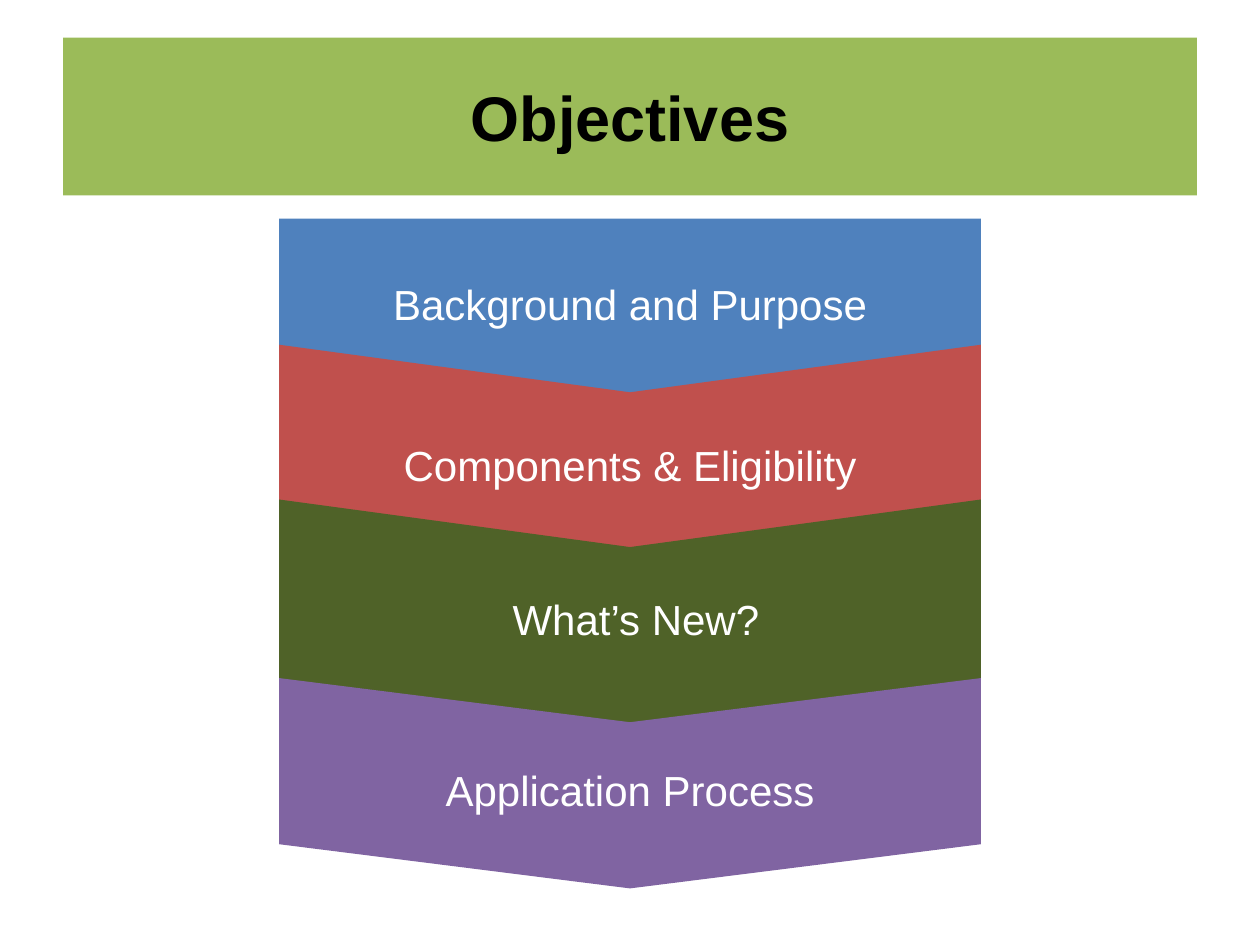
from pptx import Presentation
from pptx.dml.color import RGBColor
from pptx.enum import shapes, text
from pptx.util import Cm, Pt

BLACK = RGBColor(0x00, 0x00, 0x00)
WHITE = RGBColor(0xFF, 0xFF, 0xFF)
LIME = RGBColor(0x9B, 0xBB, 0x59)
BLUE = RGBColor(0x4F, 0x81, 0xBD)
RED = RGBColor(0xC0, 0x50, 0x4D)
GREEN = RGBColor(0x4F, 0x62, 0x28)
PURPLE = RGBColor(0x80, 0x64, 0xA2)

PENTAGON = shapes.MSO_SHAPE.PENTAGON
CHEVRON = shapes.MSO_SHAPE.CHEVRON

TITLE = "Objectives"
OBJECTIVES = [
    ("Background and Purpose", PENTAGON, BLUE, 4.41, 3.61, 0.22, 0.38),
    ("Components & Eligibility", CHEVRON, RED, 6.95, 4.57, 0.21, 0.43),
    (" What’s New?", CHEVRON, GREEN, 10.07, 4.57, 0.21, 0.43),
    ("Application Process", CHEVRON, PURPLE, 13.67, 4.24, 0.21, 0.43),
]
SLIDE_W, SLIDE_H = 25.4, 19.05
BAND_W = 14.15

TITLE_FONT = {"name": "Arial", "size": Pt(36), "bold": True}
BAND_FONT = {"name": "Arial", "size": Pt(24), "bold": False}


def set_all(obj, values):
    for name, value in values.items():
        setattr(obj, name, value)


def write(sp, words, font, color):
    tf = sp.text_frame
    set_all(tf, {"word_wrap": True, "vertical_anchor": text.MSO_ANCHOR.MIDDLE})
    p = tf.paragraphs[0]
    p.alignment = text.PP_ALIGN.CENTER
    r = p.add_run()
    r.text = words
    set_all(r.font, font)
    r.font.color.rgb = color


def paint(sp, color):
    sp.fill.solid()
    sp.fill.fore_color.rgb = color
    sp.line.fill.background()


def add_title(s):
    sp = s.shapes.title
    set_all(sp, {"left": Cm(1.27), "top": Cm(0.76),
                 "width": Cm(22.86), "height": Cm(3.18)})
    paint(sp, LIME)
    write(sp, TITLE, TITLE_FONT, BLACK)


def add_band(s, words, kind, color, top, height, point, inset):
    left = (SLIDE_W - height) / 2
    turned_top = top + (height - BAND_W) / 2
    sp = s.shapes.add_shape(kind, Cm(left), Cm(turned_top), Cm(height), Cm(BAND_W))
    sp.rotation = 90
    sp.adjustments[0] = point
    sp.shadow.inherit = False
    paint(sp, color)
    write(sp, words, BAND_FONT, WHITE)
    tf = sp.text_frame
    set_all(tf, {"margin_left": Cm(inset), "margin_right": Cm(0.18),
                 "margin_top": Cm(0.1), "margin_bottom": Cm(0.1)})
    tf._txBody.bodyPr.set("vert", "vert270")


def main():
    prs = Presentation()
    set_all(prs, {"slide_width": Cm(SLIDE_W), "slide_height": Cm(SLIDE_H)})
    s = prs.slides.add_slide(prs.slide_layouts[5])
    add_title(s)
    for objective in OBJECTIVES:
        add_band(s, *objective)
    prs.save("out.pptx")


if __name__ == "__main__":
    main()
